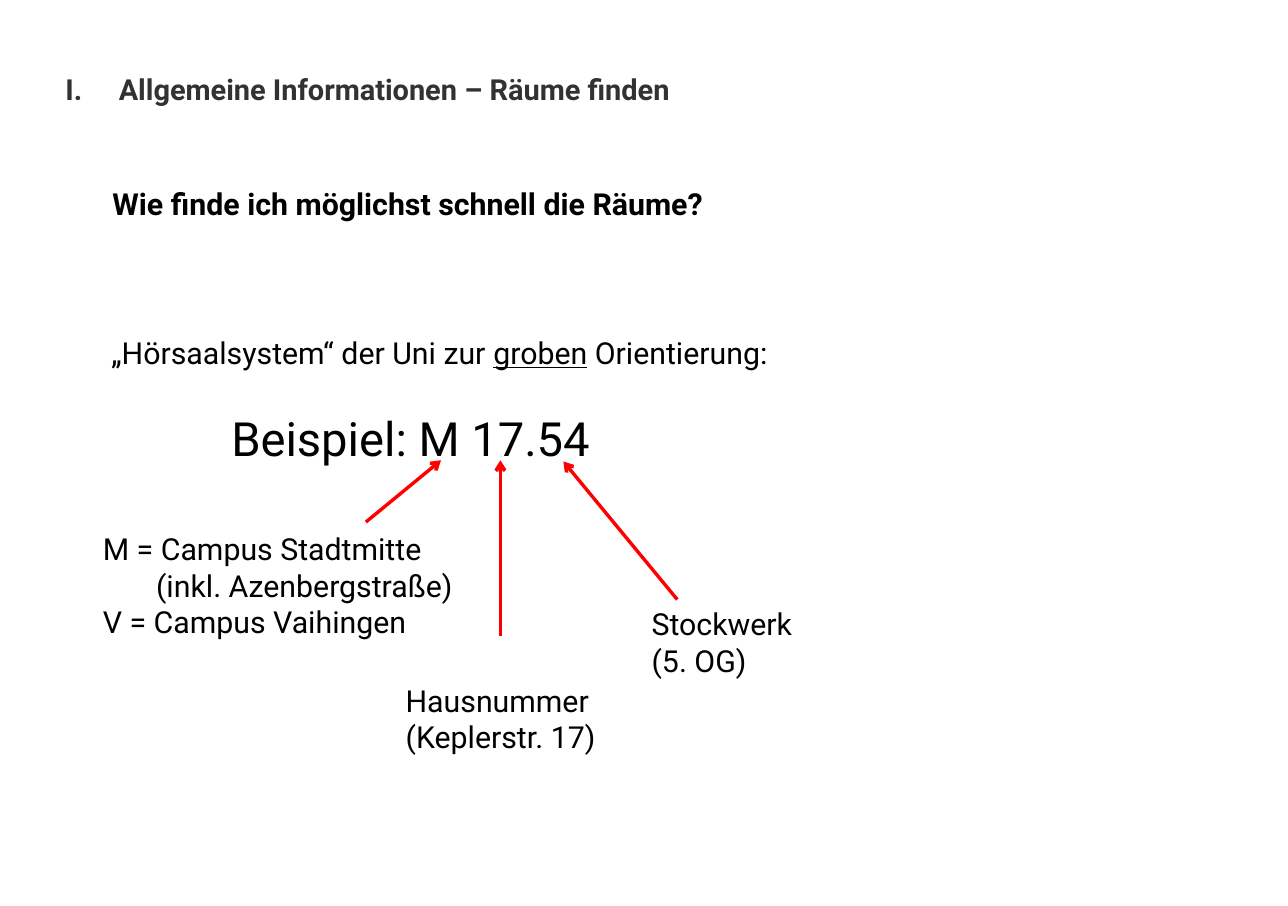
"""Build the slide that explains how room numbers are read."""
import pptx
import pptx.util
import pptx.dml.color
import pptx.enum.shapes
import pptx.enum.text
import lxml.etree

PX = 9144
SIZE = (1063, 748)
THEME = {
    "font": "Roboto", "title": "323232", "text": "000000", "arrow": "FF0000",
    "head": 17.2, "body": 18, "large": 28, "line": 2,
}

TITLE = ("Allgemeine Informationen – Räume finden", (54, 52, 954, 36))
HANG = 44
ASK = ("Wie finde ich möglichst schnell die Räume?", (83, 148, 611, 40))
INTRO = ("„Hörsaalsystem“ der Uni zur ", "groben", " Orientierung:")
SAMPLE = "Beispiel: M 17.54"
SYSTEM = (82, 271, 929, 118)
SHIFT, GAP = 99, 32
LABELS = [
    (["M = Campus Stadtmitte", "(inkl. Azenbergstraße)", "V = Campus Vaihingen"],
     (75, 433, 332, 101)),
    (["Hausnummer", "(Keplerstr. 17)"], (325, 558, 186, 71)),
    (["Stockwerk", "(5. OG)"], (528, 495, 137, 71)),
]
ARROWS = [(302, 431, 364, 380), (413, 525, 413, 380), (559, 495, 465, 381)]


def scale(*sizes):
    return [pptx.util.Emu(size * PX) for size in sizes]


def color(name):
    return pptx.dml.color.RGBColor.from_string(THEME[name])


def style(part, size="body", tone="text", bold=False):
    for run in part.runs:
        run.font.name = THEME["font"]
        run.font.size = pptx.util.Pt(THEME[size])
        run.font.color.rgb = color(tone)
        run.font.bold = bold


def indent(part, left, first=0):
    props = part._p.get_or_add_pPr()
    props.set("marL", str(left * PX))
    props.set("indent", str(first * PX))
    return props


def add_text(slide, lines, box, wrap=True, bold=False):
    frame = slide.shapes.add_textbox(*scale(*box)).text_frame
    frame.word_wrap = wrap
    frame.text = "\n".join(lines)
    for part in frame.paragraphs:
        style(part, bold=bold)
    return frame


def add_title(slide):
    text, box = TITLE
    shape = slide.shapes.title
    shape.left, shape.top, shape.width, shape.height = scale(*box)
    frame = shape.text_frame
    frame.text = text
    frame.auto_size = pptx.enum.text.MSO_AUTO_SIZE.NONE
    frame.vertical_anchor = pptx.enum.text.MSO_ANCHOR.BOTTOM
    frame.margin_left = frame.margin_right = 0
    frame.margin_top = frame.margin_bottom = 0
    part = frame.paragraphs[0]
    part.alignment = pptx.enum.text.PP_ALIGN.LEFT
    part.line_spacing = 0.9
    props = indent(part, HANG, -HANG)
    mark = lxml.etree.SubElement(props, pptx.oxml.ns.qn("a:buAutoNum"))
    mark.set("type", "romanUcPeriod")
    style(part, "head", "title", True)


def add_system(slide):
    frame = add_text(slide, ["", SAMPLE], SYSTEM)
    intro, sample = frame.paragraphs
    for text in INTRO:
        intro.add_run().text = text
    style(intro)
    intro.runs[1].font.underline = True
    indent(sample, SHIFT)
    sample.space_before = scale(GAP)[0]
    style(sample, "large")


def add_arrow(slide, ends):
    kind = pptx.enum.shapes.MSO_CONNECTOR.STRAIGHT
    arrow = slide.shapes.add_connector(kind, *scale(*ends))
    arrow.line.color.rgb = color("arrow")
    arrow.line.width = pptx.util.Pt(THEME["line"])
    line = arrow.line._get_or_add_ln()
    lxml.etree.SubElement(line, pptx.oxml.ns.qn("a:tailEnd")).set("type", "arrow")
    props = arrow._element.spPr
    lxml.etree.SubElement(props, pptx.oxml.ns.qn("a:effectLst"))


def main():
    deck = pptx.Presentation()
    deck.slide_width, deck.slide_height = scale(*SIZE)
    slide = deck.slides.add_slide(deck.slide_layouts[5])
    add_title(slide)
    text, box = ASK
    add_text(slide, [text], box, bold=True)
    add_system(slide)
    for (lines, box), ends in zip(LABELS, ARROWS):
        add_arrow(slide, ends)
        frame = add_text(slide, lines, box, wrap=False)
        if len(lines) == 3:
            indent(frame.paragraphs[1], HANG)
    deck.save("out.pptx")


if __name__ == "__main__":
    main()
